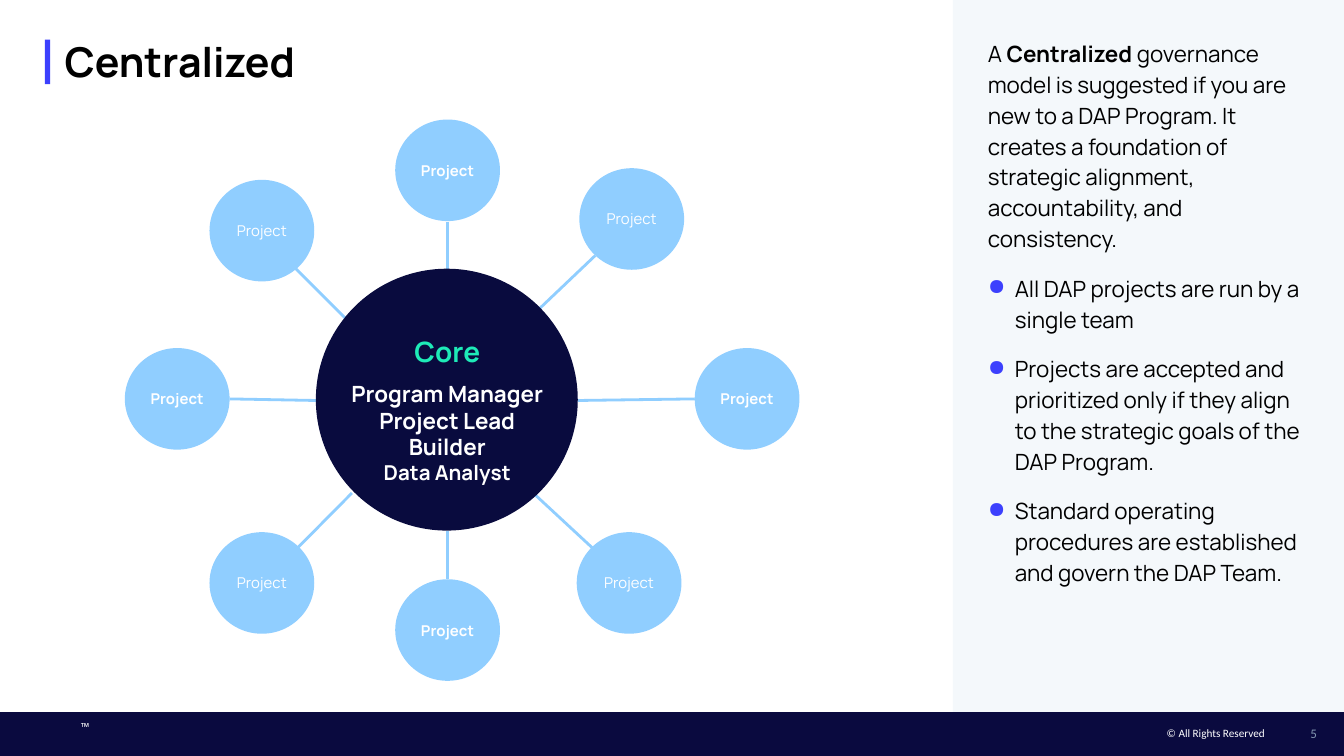
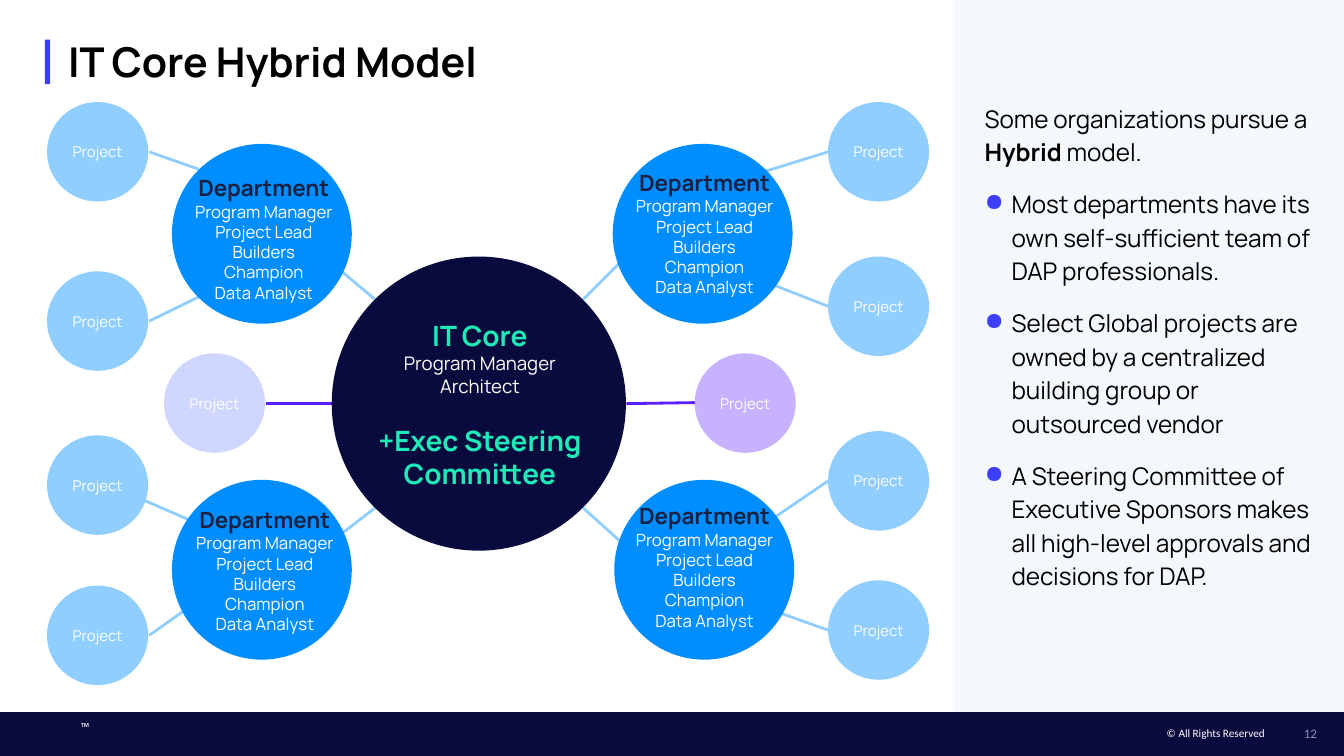
from dataclasses import dataclass, field

from lxml import etree
from pptx import Presentation
from pptx.dml.color import RGBColor
from pptx.enum.shapes import MSO_CONNECTOR, MSO_SHAPE
from pptx.enum.text import MSO_ANCHOR, PP_ALIGN
from pptx.oxml.ns import qn
from pptx.util import Cm, Pt

RECTANGLE, OVAL = MSO_SHAPE.RECTANGLE, MSO_SHAPE.OVAL
STRAIGHT = MSO_CONNECTOR.STRAIGHT
LEFT, CENTER, RIGHT = PP_ALIGN.LEFT, PP_ALIGN.CENTER, PP_ALIGN.RIGHT
TOP, MIDDLE = MSO_ANCHOR.TOP, MSO_ANCHOR.MIDDLE

COLORS = {
    "band": "0A0A3F", "core": "090B3E", "accent": "3C40FD", "panel": "F4F8FB",
    "project": "90CEFF", "department": "008EFF", "heading": "192143",
    "mint": "1EEBB8", "lavender": "CFD6FF", "violet": "5A1FFF",
    "page": "8296B0", "white": "FFFFFF", "black": "000000",
}
MAIN_FONT, FOOTER_FONT, MARK_FONT = "Manrope", "Calibri", "Open Sans"

FOOTER_INSETS = (0.18, 0.1, 0.18, 0.1)
TEXT_INSETS = (0.25, 0.25, 0.25, 0.25)
TITLE_INSETS = (0.25, 0, 0, 0)
CIRCLE_INSETS = (0.1, 0.05, 0.1, 0.05)

Box = tuple[float, float, float, float]
Segment = tuple[float, float, float, float]


@dataclass(frozen=True)
class Run:
    text: str
    size: float
    color: str = "white"
    bold: bool = False
    font: str = MAIN_FONT


@dataclass(frozen=True)
class Para:
    runs: list[Run]
    formats: dict = field(default_factory=dict)
    bullet_hang: float = 0


@dataclass(frozen=True)
class Circle:
    box: Box
    color: str
    label: str = ""
    bold: bool = False
    opacity: int = 100


@dataclass(frozen=True)
class Link:
    segment: Segment
    color: str = "project"


@dataclass(frozen=True)
class Caption:
    box: Box
    paras: list[Para]


@dataclass(frozen=True)
class Page:
    number: str
    title: str
    title_left: float
    links: list[Link]
    circles: list[Circle]
    captions: list[Caption]
    summary: Caption


def rgb(name: str) -> RGBColor:
    return RGBColor.from_string(COLORS[name])


def apply(target, formats: dict) -> None:
    for name, value in formats.items():
        setattr(target, name, value)


def centered(*runs: Run, **formats) -> Para:
    return Para(list(runs), {"alignment": CENTER, **formats})


# Drawing
def add_bullet(paragraph, hang: float) -> None:
    properties = paragraph._p.get_or_add_pPr()
    properties.set("marL", str(Cm(0.51)))
    properties.set("indent", str(-Cm(hang)))
    color = etree.SubElement(properties, qn("a:buClr"))
    etree.SubElement(color, qn("a:srgbClr"), val=COLORS["accent"])
    etree.SubElement(properties, qn("a:buChar"), char="●")


def fill_text(shape, paras: list[Para], insets: Box, anchor=TOP, wrap: bool = True) -> None:
    frame = shape.text_frame
    sides = ("margin_left", "margin_top", "margin_right", "margin_bottom")
    apply(frame, dict(zip(sides, map(Cm, insets))))
    apply(frame, {"word_wrap": wrap, "vertical_anchor": anchor})
    for index, para in enumerate(paras):
        paragraph = frame.add_paragraph() if index else frame.paragraphs[0]
        if para.bullet_hang:
            add_bullet(paragraph, para.bullet_hang)
        apply(paragraph, para.formats)
        for item in para.runs:
            run = paragraph.add_run()
            run.text = item.text
            apply(run.font, {"size": Pt(item.size), "bold": item.bold, "name": item.font})
            run.font.color.rgb = rgb(item.color)


def draw_text(slide, box: Box, paras: list[Para], insets: Box = TEXT_INSETS,
              anchor=TOP, wrap: bool = True) -> None:
    fill_text(slide.shapes.add_textbox(*map(Cm, box)), paras, insets, anchor, wrap)


def draw_shape(slide, kind, box: Box, color: str, opacity: int = 100):
    shape = slide.shapes.add_shape(kind, *map(Cm, box))
    shape.shadow.inherit = False
    shape.fill.solid()
    shape.fill.fore_color.rgb = rgb(color)
    shape.line.fill.background()
    if opacity < 100:
        solid = shape._element.spPr.find(qn("a:solidFill"))
        etree.SubElement(solid[0], qn("a:alpha"), val=str(opacity * 1000))
    return shape


def draw_circle(slide, circle: Circle) -> None:
    shape = draw_shape(slide, OVAL, circle.box, circle.color, circle.opacity)
    if circle.label:
        label = centered(Run(circle.label, 8, bold=circle.bold))
        fill_text(shape, [label], CIRCLE_INSETS, MIDDLE)


def draw_link(slide, link: Link) -> None:
    connector = slide.shapes.add_connector(STRAIGHT, *map(Cm, link.segment))
    connector.line.color.rgb = rgb(link.color)
    connector.line.width = Pt(1.5)
    etree.SubElement(connector._element.spPr, qn("a:effectLst"))


def draw_frame(slide, page: Page) -> None:
    # Footer band, title accent and side panel
    draw_shape(slide, RECTANGLE, (0, 13.46, 25.4, 0.83), "band")
    draw_shape(slide, RECTANGLE, (0.85, 0.75, 0.1, 0.84), "accent")
    draw_shape(slide, RECTANGLE, (18.01, 0, 7.39, 13.46), "panel")
    footers = [
        ((24.08, 13.59, 0.99, 0.53), Run(page.number, 7, "page", font=FOOTER_FONT), RIGHT),
        ((1.35, 13.56, 0.43, 0.36), Run("™", 6, font=MARK_FONT), CENTER),
        ((21.87, 13.59, 2.74, 0.53), Run("© All Rights Reserved", 6, font=FOOTER_FONT), LEFT),
    ]
    for box, run, alignment in footers:
        draw_text(slide, box, [Para([run], {"alignment": alignment})],
                  FOOTER_INSETS, MIDDLE, wrap=alignment != CENTER)
    title = Run(page.title, 22, "black", True)
    draw_text(slide, (page.title_left, 0.69, 19.58, 0.97), [Para([title])], TITLE_INSETS)


def draw_page(deck, page: Page) -> None:
    slide = deck.slides.add_slide(deck.slide_layouts[6])
    draw_frame(slide, page)
    for link in page.links:
        draw_link(slide, link)
    for circle in page.circles:
        draw_circle(slide, circle)
    for caption in [*page.captions, page.summary]:
        draw_text(slide, caption.box, caption.paras)


# Content builders
def summary(box: Box, size: float, hang: float, intro: tuple[str, str, str],
            points: list[str]) -> Caption:
    """Intro with a bold middle part, followed by bullet points."""
    runs = [Run(text, size, "black", index == 1) for index, text in enumerate(intro)]
    paras = [Para(runs, {"line_spacing": 1.15})]
    for point in points:
        formats = {"line_spacing": 1.15, "space_before": Pt(10)}
        if point == points[-1]:
            formats["space_after"] = Pt(10)
        paras.append(Para([Run(point, size, "black")], formats, hang))
    return Caption(box, paras)


def project(left: float, top: float, size: tuple[float, float], color: str = "project",
            bold: bool = False, opacity: int = 100) -> Circle:
    return Circle((left, top, *size), color, "Project", bold, opacity)


def department(left: float, top: float) -> Caption:
    roles = ["Program Manager", "Project Lead", "Builders", "Champion", "Data Analyst"]
    heading = centered(Run("Department", 12, "heading", True))
    return Caption((left, top, 3.51, 3.33),
                   [heading, *(centered(Run(role, 9)) for role in roles)])


def centralized_page() -> Page:
    size = (1.98, 1.92)
    straight = [(2.36, 6.58), (13.13, 6.58), (7.47, 10.95), (7.47, 2.26)]
    diagonal = [(10.95, 3.18), (10.9, 10.06), (3.96, 3.4), (3.96, 10.06)]
    spokes = [
        (11.25, 4.83, 10.21, 5.82), (11.2, 10.36, 10.11, 9.35),
        (10.92, 7.57, 13.13, 7.54), (4.34, 7.54, 5.97, 7.57),
        (8.46, 4.19, 8.46, 5.08), (8.46, 10.03, 8.46, 10.95),
        (5.54, 5.03, 6.53, 6.02), (5.64, 10.34, 6.65, 9.32),
    ]
    core_roles = [("Program Manager", 12), ("Project Lead", 12), ("Builder", 12),
                  ("Data Analyst", 11)]
    return Page(
        "5", "Centralized", 0.97,
        [Link(spoke) for spoke in spokes],
        [Circle((5.97, 5.08, 4.95, 4.95), "core"),
         *(project(*place, size, bold=True) for place in straight),
         *(project(*place, size) for place in diagonal)],
        [Caption((5.89, 6.93, 5.13, 2.51),
                 [centered(Run(role, points, bold=True)) for role, points in core_roles]),
         Caption((5.89, 6.07, 5.13, 1.14), [centered(Run("Core", 15, "mint", True))])],
        summary((18.42, 0.43, 6.68, 11.53), 12, 0.58,
                ("A ", "Centralized",
                 " governance model is suggested if you are new to a DAP Program. It creates"
                 " a foundation of strategic alignment, accountability, and consistency."),
                ["All DAP projects are run by a single team",
                 "Projects are accepted and prioritized only if they align to the strategic"
                 " goals of the DAP Program.",
                 "Standard operating procedures are established and govern the DAP Team."]),
    )


def hybrid_page() -> Page:
    size = (1.91, 1.88)
    columns = {0.89: (1.93, 5.13, 8.23, 11.07), 15.65: (1.93, 4.85, 8.15, 10.97)}
    departments = [(3.25, 2.72), (11.58, 2.72), (11.61, 9.07), (3.25, 9.07)]
    department_texts = [(3.23, 3.05), (11.56, 2.95), (11.56, 9.25), (3.25, 9.32)]
    core_links = [(7.09, 9.6, 6.1, 10.36), (11.02, 5.66, 11.96, 4.72),
                  (7.09, 5.66, 6.12, 4.85), (11.02, 9.6, 12.04, 10.52)]
    project_links = [
        (13.94, 3.4, 15.65, 2.87), (14.35, 5.28, 15.65, 5.79),
        (2.82, 2.87, 3.76, 3.2), (2.82, 6.07, 3.76, 5.61),
        (14.61, 9.8, 15.65, 9.09), (14.58, 11.53, 15.65, 11.91),
        (2.64, 9.42, 4.04, 10.03), (2.82, 12.01, 3.68, 11.4),
    ]
    global_links = [(11.84, 7.63, 13.13, 7.61), (5.03, 7.62, 6.27, 7.62)]
    return Page(
        "12", "IT Core Hybrid Model", 1.04,
        [*(Link(segment) for segment in core_links + project_links),
         *(Link(segment, "violet") for segment in global_links)],
        [Circle((6.27, 4.85, 5.56, 5.56), "core"),
         project(3.1, 6.68, size, "lavender"),
         project(13.13, 6.68, size, "violet", opacity=34),
         *(project(left, top, size) for left, tops in columns.items() for top in tops),
         *(Circle((*place, 3.4, 3.4), "department") for place in departments)],
        [Caption((6.58, 5.77, 4.98, 3.71),
                 [centered(Run("IT Core", 15, "mint", True)),
                  centered(Run("Program Manager", 10)),
                  centered(Run("Architect", 10)),
                  centered(Run("+Exec Steering Committee", 15, "mint", True),
                           space_before=Pt(14))]),
         *(department(*place) for place in department_texts)],
        summary((18.36, 1.63, 7.04, 10.44), 13, 0.61,
                ("Some organizations pursue a ", "Hybrid", " model."),
                ["Most departments have its own self-sufficient team of DAP professionals.",
                 "Select Global projects are owned by a centralized building group or"
                 " outsourced vendor",
                 "A Steering Committee of Executive Sponsors makes all high-level approvals"
                 " and decisions for DAP."]),
    )


def main() -> None:
    deck = Presentation()
    apply(deck, {"slide_width": Cm(25.4), "slide_height": Cm(14.29)})
    for page in (centralized_page(), hybrid_page()):
        draw_page(deck, page)
    deck.save("out.pptx")


if __name__ == "__main__":
    main()
